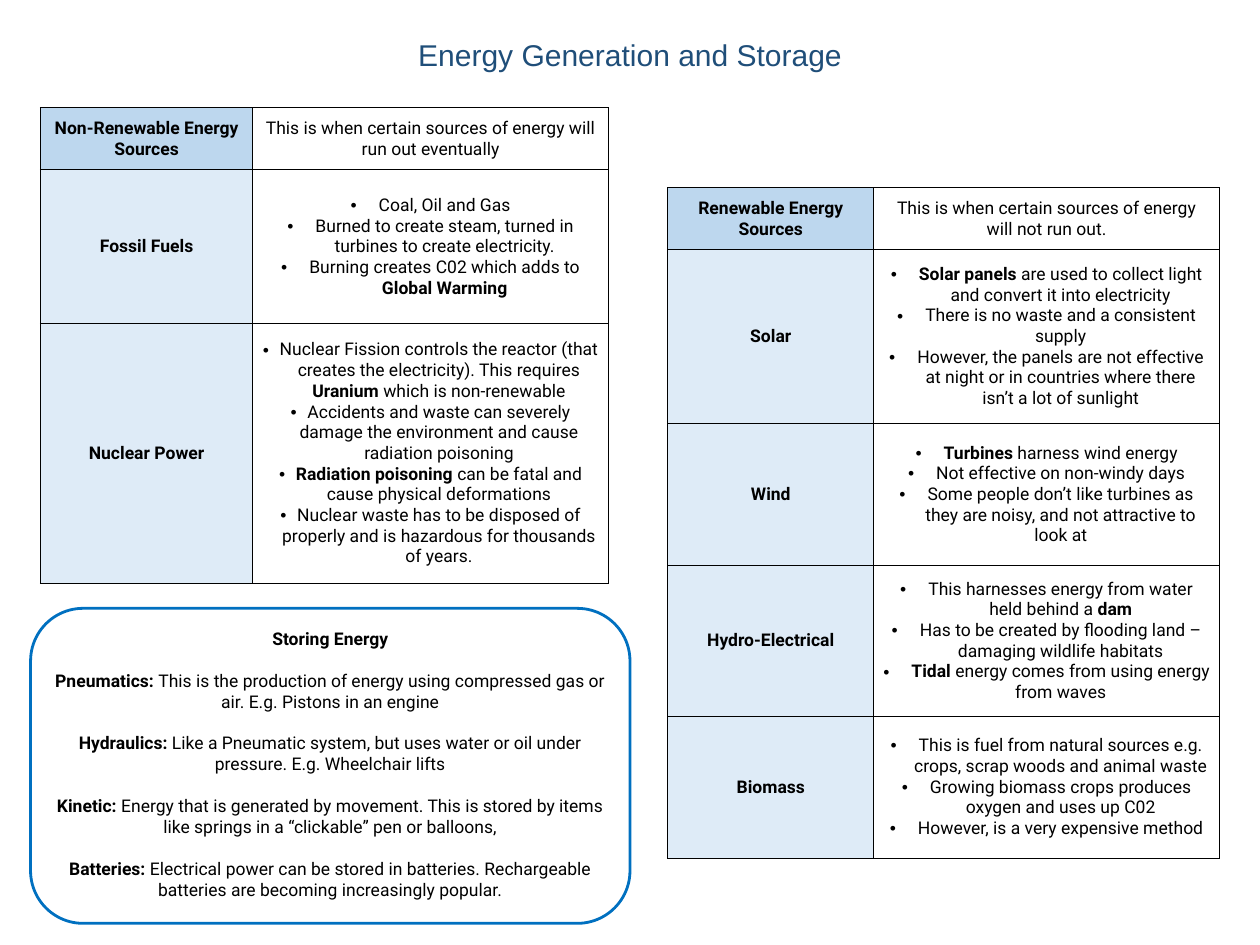
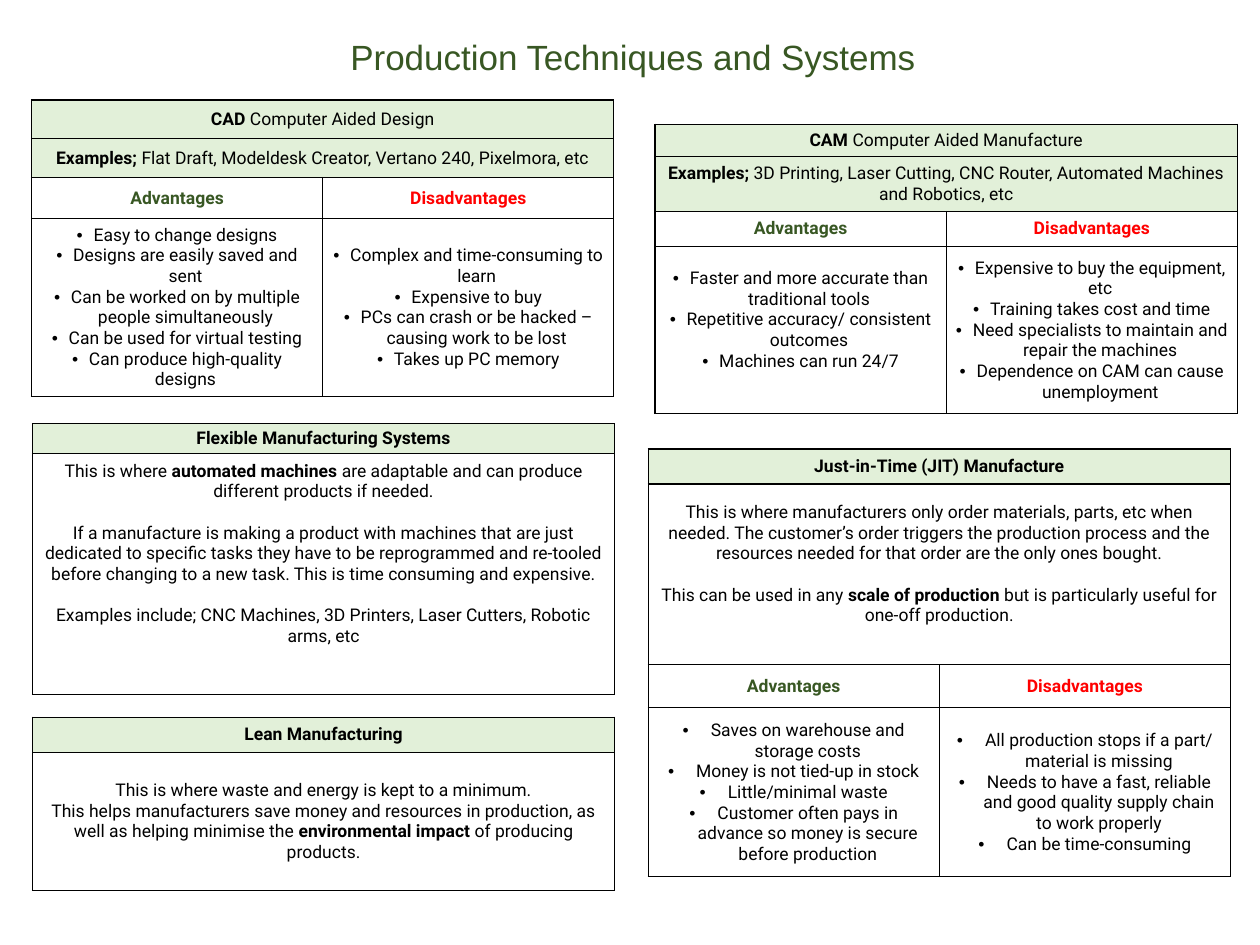
"""Build two knowledge organiser slides on energy and production systems."""
from dataclasses import dataclass
from typing import Any

import lxml.etree
import pptx
import pptx.dml.color
import pptx.enum.shapes
import pptx.enum.text
import pptx.oxml.ns
import pptx.util

Pt = pptx.util.Pt
qn = pptx.oxml.ns.qn
CENTER = pptx.enum.text.PP_ALIGN.CENTER
MIDDLE = pptx.enum.text.MSO_ANCHOR.MIDDLE
TOP = pptx.enum.text.MSO_ANCHOR.TOP

COLOURS = {
    "text": "000000",
    "border": "000000",
    "energy title": "1F4E79",
    "energy header": "BDD7EE",
    "energy label": "DEEBF7",
    "storage outline": "0070C0",
    "production title": "385723",
    "production header": "E2F0D9",
    "advantages": "385723",
    "disadvantages": "FF0000",
}
BODY_FONT = {"name": "Roboto", "size": Pt(14)}
TITLE_FONT = {"name": "Arial", "bold": False}
NARROW, WIDE = 13.5, 22.5
BLANK_LINE = 16.5
MARGIN = 3.6
HALF = 233


@dataclass
class Cell:
    lines: list[str]
    fill: str = ""
    colour: str = "text"
    indent: float = 0
    gap: float = 0
    room_below: float = MARGIN


@dataclass
class Grid:
    left: float
    top: float
    columns: list[float]
    heights: list[float]
    rows: list[list[Cell]]


@dataclass
class Title:
    text: str
    colour: str
    size: float
    left: float
    top: float
    width: float
    height: float


def rgb(name: str) -> pptx.dml.color.RGBColor:
    return pptx.dml.color.RGBColor.from_string(COLOURS[name])


def set_all(target: Any, values: dict[str, Any]) -> None:
    for name, value in values.items():
        setattr(target, name, value)


def add_bullet(para: Any, indent: float) -> None:
    properties = para._p.get_or_add_pPr()
    properties.set("marL", str(Pt(indent)))
    properties.set("indent", str(-Pt(indent)))
    lxml.etree.SubElement(properties, qn("a:buFont"), typeface="Arial")
    lxml.etree.SubElement(properties, qn("a:buChar"), char="•")


def write_lines(frame: Any, cell: Cell) -> None:
    for number, line in enumerate(cell.lines):
        para = frame.add_paragraph() if number else frame.paragraphs[0]
        para.alignment = CENTER
        if number and cell.gap:
            para.space_before = Pt(cell.gap)
        if cell.indent:
            add_bullet(para, cell.indent)
        for part, text in enumerate(line.split("**")):
            if text:
                span = para.add_run()
                span.text = text
                set_all(span.font, {**BODY_FONT, "bold": part % 2 == 1})
                span.font.color.rgb = rgb(cell.colour)


def add_borders(box: Any) -> None:
    properties = box._tc.get_or_add_tcPr()
    for side in ("a:lnL", "a:lnR", "a:lnT", "a:lnB"):
        line = lxml.etree.SubElement(properties, qn(side), w=str(Pt(1)))
        fill = lxml.etree.SubElement(line, qn("a:solidFill"))
        lxml.etree.SubElement(fill, qn("a:srgbClr"), val=COLOURS["border"])


def fill_cell(box: Any, cell: Cell) -> None:
    set_all(box, {"vertical_anchor": MIDDLE, "margin_bottom": Pt(cell.room_below)})
    if cell.fill:
        box.fill.solid()
        box.fill.fore_color.rgb = rgb(cell.fill)
    else:
        box.fill.background()
    write_lines(box.text_frame, cell)


def draw_grid(page: Any, grid: Grid) -> None:
    lengths = (grid.left, grid.top, sum(grid.columns), sum(grid.heights))
    table = page.shapes.add_table(
        len(grid.heights), len(grid.columns), *map(Pt, lengths)).table
    set_all(table, {"first_row": False, "horz_banding": False})
    for column, width in zip(table.columns, grid.columns):
        column.width = Pt(width)
    for row, height in zip(table.rows, grid.heights):
        row.height = Pt(height)
    for box in table.iter_cells():
        add_borders(box)
    last = len(grid.columns) - 1
    for r, cells in enumerate(grid.rows):
        if len(cells) <= last:
            table.cell(r, 0).merge(table.cell(r, last))
        for c, cell in enumerate(cells):
            fill_cell(table.cell(r, c), cell)


def add_page(deck: Any, title: Title) -> Any:
    page = deck.slides.add_slide(deck.slide_layouts[5])
    box = page.shapes.title
    set_all(box, {side: Pt(getattr(title, side))
                  for side in ("left", "top", "width", "height")})
    frame = box.text_frame
    frame.text = title.text
    set_all(frame, {"word_wrap": True, "vertical_anchor": TOP,
                    "auto_size": pptx.enum.text.MSO_AUTO_SIZE.NONE})
    para = frame.paragraphs[0]
    para.alignment = CENTER
    font = para.runs[0].font
    set_all(font, {**TITLE_FONT, "size": Pt(title.size)})
    font.color.rgb = rgb(title.colour)
    return page


def draw_storage(page: Any, cell: Cell) -> None:
    box = page.shapes.add_shape(
        pptx.enum.shapes.MSO_SHAPE.ROUNDED_RECTANGLE,
        Pt(24.5), Pt(486.7), Pt(479.5), Pt(252))
    box.shadow.inherit = False
    box.fill.background()
    box.line.color.rgb = rgb("storage outline")
    box.line.width = Pt(2.25)
    set_all(box.text_frame, {"word_wrap": True, "vertical_anchor": TOP})
    write_lines(box.text_frame, cell)


def energy_header(name: str, meaning: str) -> list[Cell]:
    return [Cell([f"**{name}**"], "energy header"), Cell([meaning])]


def energy_row(name: str, facts: list[str], indent: float = WIDE) -> list[Cell]:
    return [Cell([f"**{name}**"], "energy label"), Cell(facts, indent=indent)]


def production_header(text: str) -> list[Cell]:
    return [Cell([text], "production header")]


def pros_and_cons(pros: list[str], cons: list[str], indent: float = NARROW,
                  room_below_pros: float = MARGIN) -> list[list[Cell]]:
    return [
        [Cell(["**Advantages**"], colour="advantages"),
         Cell(["**Disadvantages**"], colour="disadvantages")],
        [Cell(pros, indent=indent, room_below=room_below_pros),
         Cell(cons, indent=indent)],
    ]


ENERGY_TITLE = Title("Energy Generation and Storage", "energy title", 24,
                     183.6, 25.9, 640.8, 36)
ENERGY_GRIDS = [
    Grid(32.4, 86.2, [169.8, 284.6], [49.6, 123.2, 207.5], [
        energy_header("Non-Renewable Energy Sources",
                      "This is when certain sources of energy will run out eventually"),
        energy_row("Fossil Fuels", [
            "Coal, Oil and Gas",
            "Burned to create steam, turned in turbines to create electricity.",
            "Burning creates C02 which adds to **Global Warming**"]),
        energy_row("Nuclear Power", [
            "Nuclear Fission controls the reactor (that creates the electricity). "
            "This requires **Uranium** which is non-renewable",
            "Accidents and waste can severely damage the environment and cause "
            "radiation poisoning",
            "**Radiation poisoning **can be fatal and cause physical deformations",
            "Nuclear waste has to be disposed of properly and is hazardous for "
            "thousands of years."], NARROW),
    ]),
    Grid(534.2, 150.2, [164.9, 276.5], [49.6, 139, 113.8, 120.4, 113.8], [
        energy_header("Renewable Energy Sources",
                      "This is when certain sources of energy will not run out."),
        energy_row("Solar", [
            "**Solar panels **are used to collect light and convert it into electricity",
            "There is no waste and a consistent supply",
            "However, the panels are not effective at night or in countries where "
            "there isn’t a lot of sunlight"]),
        energy_row("Wind", [
            "**Turbines** harness wind energy",
            "Not effective on non-windy days",
            "Some people don’t like turbines as they are noisy, and not attractive "
            "to look at"]),
        energy_row("Hydro-Electrical", [
            "This harnesses energy from water held behind a **dam**",
            "Has to be created by flooding land – damaging wildlife habitats",
            "**Tidal **energy comes from using energy from waves"]),
        energy_row("Biomass", [
            "This is fuel from natural sources e.g. crops, scrap woods and animal waste",
            "Growing biomass crops produces oxygen and uses up C02",
            "However, is a very expensive method"]),
    ]),
]
STORAGE = Cell([
    "**Storing Energy**",
    "**Pneumatics: **This is the production of energy using compressed gas or air. "
    "E.g. Pistons in an engine",
    "**Hydraulics: **Like a Pneumatic system, but uses water or oil under pressure. "
    "E.g. Wheelchair lifts",
    "**Kinetic: **Energy that is generated by movement. This is stored by items like "
    "springs in a “clickable” pen or balloons,",
    "**Batteries: **Electrical power can be stored in batteries. Rechargeable "
    "batteries are becoming increasingly popular.",
], gap=BLANK_LINE)

PRODUCTION_TITLE = Title("Production Techniques and Systems", "production title", 28,
                         0, 25, 1012.3, 41)
PRODUCTION_GRIDS = [
    Grid(25.2, 80, [HALF, HALF], [31, 31, 33, 142], [
        production_header("**CAD **Computer Aided Design"),
        production_header("**Examples; **Flat Draft, Modeldesk Creator, Vertano 240, "
                          "Pixelmora, etc"),
        *pros_and_cons(
            ["Easy to change designs",
             "Designs are easily saved and sent",
             "Can be worked on by multiple people simultaneously",
             "Can be used for virtual testing",
             "Can produce high-quality designs"],
            ["Complex and time-consuming to learn",
             "Expensive to buy",
             "PCs can crash or be hacked – causing work to be lost",
             "Takes up PC memory"]),
    ]),
    Grid(524, 99.3, [HALF, HALF], [25.9, 43.9, 28.1, 133.9], [
        production_header("**CAM **Computer Aided Manufacture"),
        production_header("**Examples; **3D Printing, Laser Cutting, CNC Router, "
                          "Automated Machines and Robotics, etc"),
        *pros_and_cons(
            ["Faster and more accurate than traditional tools",
             "Repetitive accuracy/ consistent outcomes",
             "Machines can run 24/7"],
            ["Expensive to buy the equipment, etc",
             "Training takes cost and time",
             "Need specialists to maintain and repair the machines",
             "Dependence on CAM can cause unemployment"], room_below_pros=20),
    ]),
    Grid(25.9, 339, [2 * HALF], [24, 192.5], [
        production_header("**Flexible Manufacturing Systems**"),
        [Cell([
            "This is where **automated machines **are adaptable and can produce "
            "different products if needed.",
            "If a manufacture is making a product with machines that are just "
            "dedicated to specific tasks they have to be reprogrammed and re-tooled "
            "before changing to a new task. This is time consuming and expensive.",
            "Examples include; CNC Machines, 3D Printers, Laser Cutters, Robotic "
            "arms, etc"], gap=BLANK_LINE, room_below=36)],
    ]),
    Grid(518.5, 359.2, [HALF, HALF], [28, 144.6, 34.6, 135.2], [
        production_header("**Just-in-Time (JIT) Manufacture**"),
        [Cell([
            "This is where manufacturers only order materials, parts, etc when needed. "
            "The customer’s order triggers the production process and the resources "
            "needed for that order are the only ones bought.",
            "This can be used in any **scale of production** but is particularly "
            "useful for one-off production."], gap=BLANK_LINE, room_below=20)],
        *pros_and_cons(
            ["Saves on warehouse and storage costs",
             "Money is not tied-up in stock",
             "Little/minimal waste",
             "Customer often pays in advance so money is secure before production"],
            ["All production stops if a part/ material is missing",
             "Needs to have a fast, reliable and good quality supply chain to work "
             "properly",
             "Can be time-consuming"], WIDE),
    ]),
    Grid(25.9, 573.8, [2 * HALF], [28.1, 110.9], [
        production_header("**Lean Manufacturing**"),
        [Cell([
            "This is where waste and energy is kept to a minimum.",
            "This helps manufacturers save money and resources in production, as well "
            "as helping minimise the **environmental impact **of producing products."])],
    ]),
]


def main() -> None:
    deck = pptx.Presentation()
    set_all(deck, {"slide_width": Pt(1008), "slide_height": Pt(756)})
    energy_page = add_page(deck, ENERGY_TITLE)
    for grid in ENERGY_GRIDS:
        draw_grid(energy_page, grid)
    draw_storage(energy_page, STORAGE)
    production_page = add_page(deck, PRODUCTION_TITLE)
    for grid in PRODUCTION_GRIDS:
        draw_grid(production_page, grid)
    deck.save("out.pptx")


if __name__ == "__main__":
    main()
